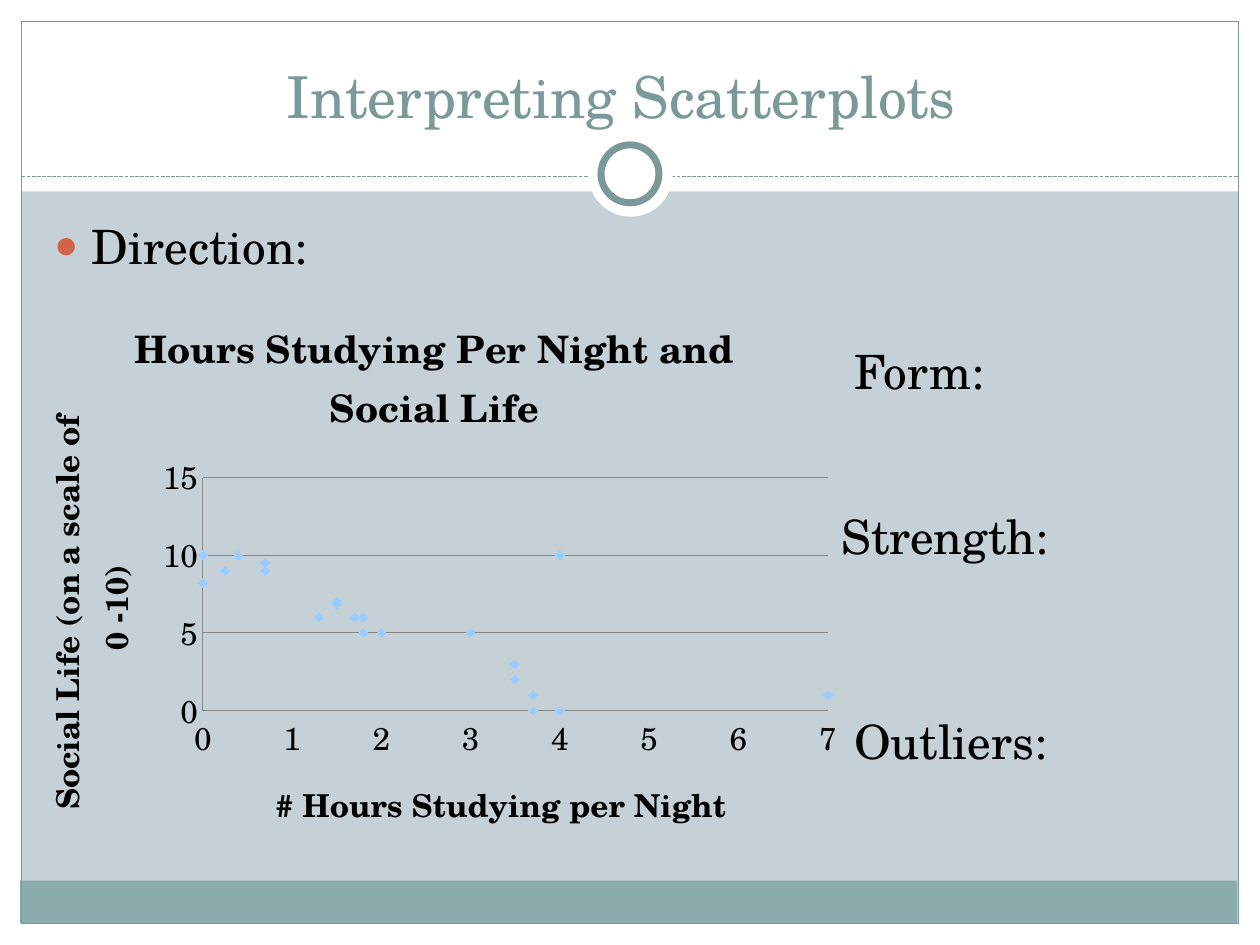
from lxml import etree
from pptx import Presentation
from pptx.chart.data import XyChartData
from pptx.dml.color import RGBColor
from pptx.enum import chart as ch, dml, shapes, text
from pptx.oxml import parse_xml
from pptx.oxml.ns import nsdecls, qn
from pptx.util import Inches, Pt

FONT = "TeX Gyre Schola"
WHITE, TEAL, BLACK, RUST, GREY = "FFFFFF", "7C999A", "000000", "D16349", "878787"
TITLE = "Interpreting Scatterplots "
LEAD = ("Direction:", 0.33, 1.67, 9.3)
LABELS = [("Form:", 6.68, 2.67), ("Strength:", 6.58, 3.98), ("Outliers:", 6.68, 5.6)]
BANDS = [
    (0, 7.33, 10, 0.17, WHITE), (0, 0, 10, 1.52, WHITE),
    (0, 0, 0.17, 7.5, WHITE), (9.83, 0, 0.17, 7.5, WHITE),
    (0.16, 6.99, 9.66, 0.34, "8CADAE"),
]
CHART_W, CHART_H = 6.67, 4.44
POINTS = [  # the first row is blank
    (None, None), (0, 10), (0.4, 10), (0.7, 9), (0.7, 9.5), (0, 8.2), (0.25, 9),
    (1.5, 7), (1.3, 6), (1.5, 6.8), (1.7, 6), (1.8, 5), (1.8, 6), (2, 5), (2, 5),
    (3.5, 3), (3, 5), (3.5, 2), (3.7, 1), (3.7, 0), (4, 10), (4, 0), (7, 1),
]


def rgb(code):
    return RGBColor.from_string(code)


def style(font, size, color=BLACK, bold=False):
    font.name, font.size, font.bold = FONT, Pt(size), bold
    font.color.rgb = rgb(color)


def stroke(line, color, width):
    line.color.rgb = rgb(color)
    line.width = Pt(width)


def block(kind, x, y, w, h, fill=None, line=None):
    shape = slide.shapes.add_shape(kind, *map(Inches, (x, y, w, h)))
    shape.shadow.inherit = False
    if fill:
        shape.fill.solid()
        shape.fill.fore_color.rgb = rgb(fill)
    else:
        shape.fill.background()
    if line:
        stroke(shape.line, *line)
    else:
        shape.line.fill.background()


def write(shape, words, size, color=BLACK):
    frame = shape.text_frame
    frame.word_wrap = True
    frame.auto_size = text.MSO_AUTO_SIZE.NONE
    frame.text = words
    para = frame.paragraphs[0]
    style(para.font, size, color)
    return para


def place(shape, x, y, w, h):
    shape.left, shape.top, shape.width, shape.height = map(Inches, (x, y, w, h))
    slide.shapes._spTree.append(shape._element)  # bring to front


def layout(x, y, w=0, h=0):
    """Manual chart layout, from inches inside the chart."""
    target = '<c:layoutTarget val="inner"/>' if w else ""
    size = f'<c:w val="{w / CHART_W}"/><c:h val="{h / CHART_H}"/>' if w else ""
    return parse_xml(
        f'<c:layout {nsdecls("c")}><c:manualLayout>{target}<c:xMode val="edge"/>'
        f'<c:yMode val="edge"/><c:x val="{x / CHART_W}"/><c:y val="{y / CHART_H}"/>'
        f"{size}</c:manualLayout></c:layout>")


def caption(owner, words, size, x, y):
    """Title of a chart or an axis, set at a point."""
    owner.has_title = True
    title = getattr(owner, "chart_title", None) or owner.axis_title
    title.text_frame.text = words
    for para in title.text_frame.paragraphs:
        style(para.font, size, bold=True)
    node = title._element
    for old in node.findall(qn("c:layout")):
        node.remove(old)
    node.find(qn("c:tx")).addnext(layout(x, y))


prs = Presentation()
prs.slide_width, prs.slide_height = Inches(10), Inches(7.5)
slide = prs.slides.add_slide(prs.slide_layouts[1])
slide.background.fill.solid()
slide.background.fill.fore_color.rgb = rgb("C5D1D7")

# Frame
RECT, OVAL = shapes.MSO_SHAPE.RECTANGLE, shapes.MSO_SHAPE.OVAL
for *box, fill in BANDS:
    block(RECT, *box, fill)
block(RECT, 0.17, 0.17, 9.66, 7.16, line=(TEAL, 0.75))
rule = slide.shapes.add_connector(
    shapes.MSO_CONNECTOR.STRAIGHT, *map(Inches, (0.17, 1.4, 9.83, 1.4)))
stroke(rule.line, TEAL, 0.75)
rule.line.dash_style = dml.MSO_LINE.SQUARE_DOT
etree.SubElement(rule._element.spPr, qn("a:effectLst"))
block(OVAL, 4.67, 1.05, 0.67, 0.67, WHITE)
block(OVAL, 4.77, 1.15, 0.46, 0.46, WHITE, (TEAL, 4))

# Title
title = slide.shapes.title
place(title, 0.33, 0.25, 9.33, 0.83)
write(title, TITLE, 33, TEAL).alignment = text.PP_ALIGN.CENTER
title.text_frame.vertical_anchor = text.MSO_ANCHOR.BOTTOM

# Scatter chart
data = XyChartData()
series = data.add_series("Series 1")
for x, y in POINTS:
    series.add_data_point(x, y)
chart = slide.shapes.add_chart(
    ch.XL_CHART_TYPE.XY_SCATTER,
    *map(Inches, (0.12, 2.34, CHART_W, CHART_H)), data).chart
chart.has_legend = False
style(chart.font, 18)
caption(chart, "Hours Studying Per Night and Social Life", 21.6, 0.89, 0.1)
hours, social = chart.category_axis, chart.value_axis
caption(hours, "# Hours Studying per Night", 18, 2.02, 3.78)
caption(social, "Social Life (on a scale of \n0 -10)", 18, 0.17, 0.85)
hours.maximum_scale, hours.major_unit = 7, 1
for axis in (hours, social):
    axis.major_tick_mark = axis.minor_tick_mark = ch.XL_TICK_MARK.NONE
    axis.has_major_gridlines = axis is social
    axis.tick_labels.number_format = "General"
    axis.tick_labels.number_format_is_linked = False
    stroke(axis.format.line, GREY, 0.5)
stroke(social.major_gridlines.format.line, GREY, 0.75)
area = chart._chartSpace.chart.plotArea
for old in area.findall(qn("c:layout")):
    area.remove(old)
area.insert(0, layout(1.49, 1.45, 4.96, 1.85))
plot = chart.plots[0]
plot.vary_by_categories = False
dots = plot.series[0]
for node in list(dots._element.iter(qn("c:pt"))):
    if node.findtext(qn("c:v")) == "None":  # leave blank cells empty
        node.getparent().remove(node)
dots.smooth = False
dots.format.line.fill.background()
dots.marker.style = ch.XL_MARKER_STYLE.DIAMOND
dots.marker.size = 5
dots.marker.format.fill.solid()
dots.marker.format.fill.fore_color.rgb = rgb("99CCFF")
dots.marker.format.line.fill.background()

# Headings to discuss
words, x, y, w = LEAD
body = slide.placeholders[1]
place(body, x, y, w, 0.66)
para = write(body, words, 27)
para.space_before = Pt(5)
props = para._p.get_or_add_pPr()
props.set("marL", str(Inches(0.3)))
props.set("indent", str(-Inches(0.3)))
color = etree.Element(qn("a:buClr"))
etree.SubElement(color, qn("a:srgbClr"), val=RUST)
bullet = [color, etree.Element(qn("a:buSzPct"), val="85000"),
          etree.Element(qn("a:buChar"), char="●")]
for spot, node in enumerate(bullet, 1):
    props.insert(spot, node)
for words, x, y in LABELS:
    box = slide.shapes.add_textbox(*map(Inches, (x, y, 2.48, 0.66)))
    write(box, words, 27).space_before = Pt(5)

prs.save("out.pptx")
